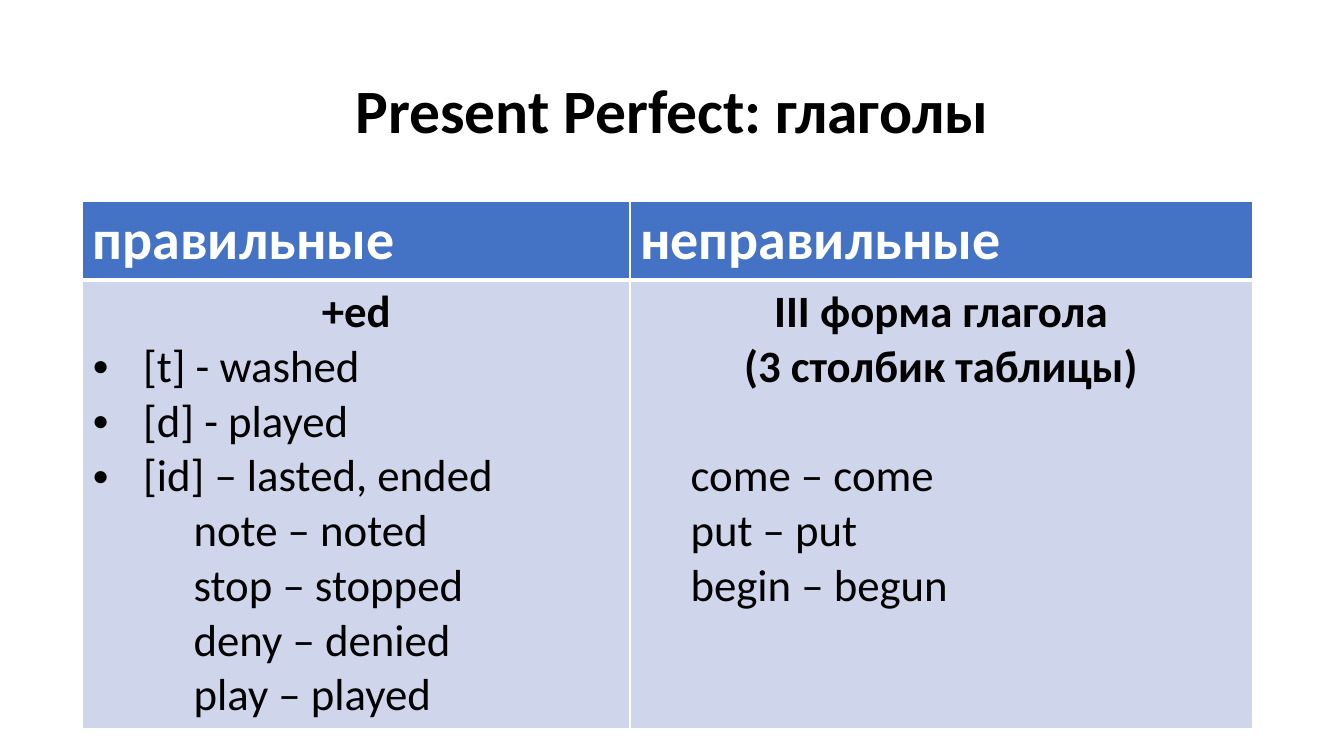
from dataclasses import dataclass
from lxml.etree import SubElement
from pptx import Presentation
from pptx.dml.color import RGBColor
from pptx.enum.text import MSO_ANCHOR, PP_ALIGN
from pptx.oxml.ns import qn
from pptx.util import Inches, Pt


@dataclass(frozen=True)
class Theme:
    font: str = "Calibri"
    ink: str = "000000"
    white: str = "FFFFFF"
    head: str = "4472C4"
    body: str = "CFD5EA"
    title: int = 44
    top: int = 40
    text: int = 32
    thin: int = 1
    thick: int = 3
    gap: int = 39


THEME = Theme()
WIDE, HIGH = 13.33, 7.5
STEP = 0.5
TITLE = (0.92, 0.4, 11.5, 1.45)
GRID = (0.82, 2, 11.6, 5.1)
COLS = (0.468, 0.532)
ROWS = (0.15, 0.85)

HEADS = ("правильные", "неправильные")
RULES = (
    (
        ("+ed", "lead"),
        ("[t] - washed", "dot"),
        ("[d] - played", "dot"),
        ("[id] – lasted, ended", "dot"),
        ("note – noted", 2),
        ("stop – stopped", 2),
        ("deny – denied", 2),
        ("play – played", 2),
    ),
    (
        ("III форма глагола", "lead"),
        ("(3 столбик таблицы)", "lead"),
        ("come – come", 1),
        ("put – put", 1),
        ("begin – begun", 1),
    ),
)


def style(para, size, color, bold):
    for run in para.runs:
        font = run.font
        font.name = THEME.font
        font.size = Pt(size)
        font.bold = bold
        font.color.rgb = RGBColor.from_string(color)


def indent(para, left, first=0):
    props = para._p.get_or_add_pPr()
    props.set("marL", str(Inches(left)))
    props.set("indent", str(Inches(first)))
    return props


def border(cell, sides):
    props = cell._tc.get_or_add_tcPr()
    for side, width in sides.items():
        line = SubElement(props, qn(f"a:ln{side}"), w=str(Pt(width)))
        fill = SubElement(line, qn("a:solidFill"))
        SubElement(fill, qn("a:srgbClr"), val=THEME.white)


def paint(cell, color, top, base):
    border(cell, {"L": THEME.thin, "R": THEME.thin, "T": top, "B": base})
    cell.fill.solid()
    cell.fill.fore_color.rgb = RGBColor.from_string(color)


def fill_head(cell, text):
    paint(cell, THEME.head, THEME.thin, THEME.thick)
    cell.text_frame.text = text
    style(cell.text_frame.paragraphs[0], THEME.top, THEME.white, True)


def fill_rules(cell, rules):
    paint(cell, THEME.body, THEME.thick, THEME.thin)
    frame = cell.text_frame
    frame.text = "\n".join(text for text, kind in rules)
    last = None
    for para, (text, kind) in zip(frame.paragraphs, rules):
        style(para, THEME.text, THEME.ink, kind == "lead")
        if kind == "lead":
            para.alignment = PP_ALIGN.CENTER
        elif kind == "dot":
            props = indent(para, STEP, -STEP)
            SubElement(props, qn("a:buFont"), typeface="Arial")
            SubElement(props, qn("a:buChar"), char="•")
        else:
            para.level = kind
            indent(para, kind * STEP)
            if last == "lead":
                para.space_before = Pt(THEME.gap)
        last = kind


def add_title(slide, box, text):
    title = slide.shapes.title
    title.left, title.top, title.width, title.height = map(Inches, box)
    frame = title.text_frame
    frame.text = text
    frame.vertical_anchor = MSO_ANCHOR.MIDDLE
    para = frame.paragraphs[0]
    para.alignment = PP_ALIGN.CENTER
    para.line_spacing = 0.9
    style(para, THEME.title, THEME.ink, True)


def add_verbs(slide, box):
    width, height = box[2:]
    table = slide.shapes.add_table(len(ROWS), len(COLS), *map(Inches, box)).table
    for col, share in zip(table.columns, COLS):
        col.width = Inches(width * share)
    for row, share in zip(table.rows, ROWS):
        row.height = Inches(height * share)
    for col, (head, rules) in enumerate(zip(HEADS, RULES)):
        fill_head(table.cell(0, col), head)
        fill_rules(table.cell(1, col), rules)


def main():
    deck = Presentation()
    deck.slide_width, deck.slide_height = Inches(WIDE), Inches(HIGH)
    slide = deck.slides.add_slide(deck.slide_layouts[5])
    add_title(slide, TITLE, "Present Perfect: глаголы")
    add_verbs(slide, GRID)
    deck.save("out.pptx")


if __name__ == "__main__":
    main()
